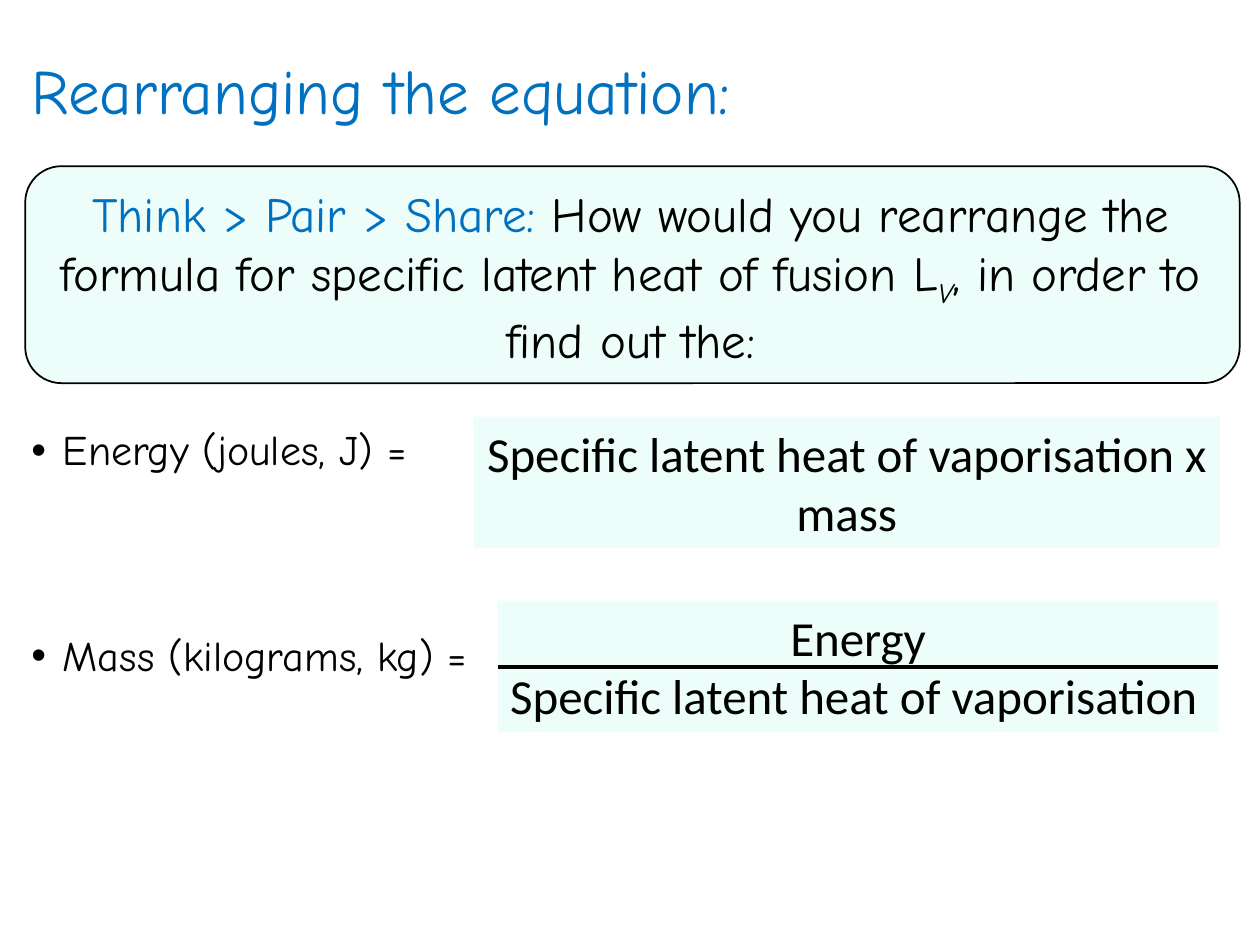
from dataclasses import dataclass

import pptx
import pptx.dml.color
import pptx.enum.shapes
import pptx.enum.text
import pptx.oxml.ns
import pptx.util
from lxml import etree

Pt = pptx.util.Pt
Color = pptx.dml.color.RGBColor
Kind = pptx.enum.shapes.MSO_SHAPE
Align = pptx.enum.text.PP_ALIGN

BLUE = Color(0x00, 0x70, 0xC0)
BLACK = Color(0, 0, 0)
MINT = Color(0xED, 0xFD, 0xFA)
COMIC = "Comic Neue"
PLAIN = "Calibri"


@dataclass
class Box:
    left: float
    top: float
    width: float
    height: float

    def place(self) -> list:
        return [Pt(v) for v in (self.left, self.top, self.width, self.height)]


@dataclass
class Term:
    text: str
    gap: float


PROMPT = Box(14.4, 95, 694, 124)
ASK = Box(20.9, 101.5, 679, 108.7)
BODY = Box(10.8, 31, 689.8, 447.8)
ENERGY = Box(270.7, 238.3, 426.2, 75)
MASS = Box(284.4, 343.4, 411.8, 75)
TERMS = [Term("Energy (joules, J) =", 172), Term("Mass (kilograms, kg) =", 91.5)]


def add_panel(slide, kind, box: Box):
    panel = slide.shapes.add_shape(kind, *box.place())
    panel.shadow.inherit = False
    panel.fill.solid()
    panel.fill.fore_color.rgb = MINT
    panel.line.fill.background()
    panel.text_frame.word_wrap = True
    panel.text_frame.vertical_anchor = pptx.enum.text.MSO_ANCHOR.TOP
    return panel


def add_frame(slide, box: Box):
    frame = slide.shapes.add_textbox(*box.place()).text_frame
    frame.word_wrap = True
    return frame


def add_run(para, text: str, *, size: float = 28, font: str = COMIC,
            color: Color = BLACK, italic: bool = False, shift: int = 0) -> None:
    """Append formatted text; shift is the baseline offset in percent."""
    run = para.add_run()
    run.text = text
    run.font.size = Pt(size)
    run.font.name = font
    run.font.color.rgb = color
    run.font.italic = italic
    if shift:
        run._r.get_or_add_rPr().set("baseline", str(shift * 1000))


def add_bullet(para, indent: float) -> None:
    props = para._p.get_or_add_pPr()
    props.set("marL", str(Pt(indent)))
    props.set("indent", str(-Pt(indent)))
    qn = pptx.oxml.ns.qn
    etree.SubElement(props, qn("a:buFont")).set("typeface", "Arial")
    etree.SubElement(props, qn("a:buChar")).set("char", "•")


def add_body(slide) -> None:
    frame = add_frame(slide, BODY)
    para = frame.paragraphs[0]
    para.line_spacing = 0.9
    add_run(para, "Rearranging the equation:", size=36, color=BLUE)
    for term in TERMS:
        para = frame.add_paragraph()
        para.line_spacing = 0.9
        para.space_before = Pt(term.gap)
        add_bullet(para, 18)
        add_run(para, term.text, size=24)


def add_ask(slide) -> None:
    para = add_frame(slide, ASK).paragraphs[0]
    para.alignment = Align.CENTER
    add_run(para, "Think > Pair > Share: ", color=BLUE)
    add_run(para, "How would you rearrange the formula for "
                  "specific latent heat of fusion L")
    add_run(para, "V", italic=True, shift=-25)
    add_run(para, ", in order to find out the:")


def add_ratio(slide) -> None:
    panel = add_panel(slide, Kind.RECTANGLE, MASS)
    frame = panel.text_frame
    top, base = frame.paragraphs[0], frame.add_paragraph()
    top.alignment = Align.CENTER
    base.alignment = Align.LEFT
    add_run(top, "Energy", font=PLAIN)
    add_run(base, "Specific latent heat of vaporisation", font=PLAIN)

    line = slide.shapes.add_connector(
        pptx.enum.shapes.MSO_CONNECTOR.STRAIGHT, 0, 0, 0, 0)
    line.begin_connect(panel, 1)
    line.end_connect(panel, 3)
    line.line.color.rgb = BLACK
    line.line.width = Pt(2.25)
    etree.SubElement(line._element.spPr, pptx.oxml.ns.qn("a:effectLst"))


def main() -> None:
    deck = pptx.Presentation()
    deck.slide_width, deck.slide_height = Pt(720), Pt(540)
    slide = deck.slides.add_slide(deck.slide_layouts[6])

    prompt = add_panel(slide, Kind.ROUNDED_RECTANGLE, PROMPT)
    prompt.line.color.rgb = BLACK
    prompt.line.width = Pt(1)
    add_body(slide)

    para = add_panel(slide, Kind.RECTANGLE, ENERGY).text_frame.paragraphs[0]
    para.alignment = Align.CENTER
    add_run(para, "Specific latent heat of vaporisation x mass", font=PLAIN)

    add_ratio(slide)
    add_ask(slide)
    deck.save("out.pptx")


if __name__ == "__main__":
    main()
